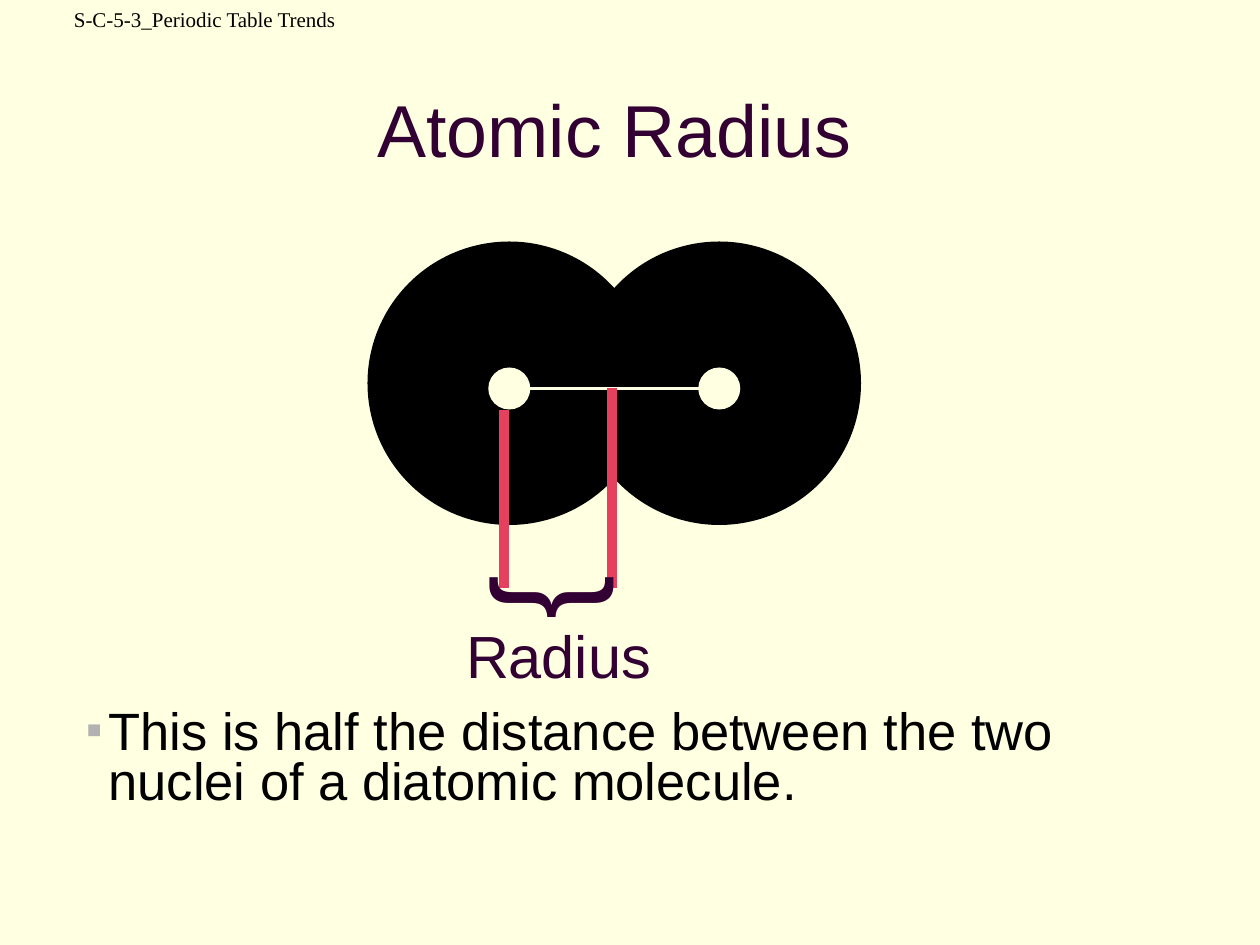
from lxml.etree import SubElement
from pptx import Presentation
from pptx.dml.color import RGBColor
from pptx.enum.shapes import MSO_CONNECTOR, MSO_SHAPE
from pptx.enum.text import MSO_ANCHOR, PP_ALIGN
from pptx.oxml.ns import qn
from pptx.util import Inches, Pt

CREAM = RGBColor(0xFF, 0xFF, 0xE1)
PLUM = RGBColor(0x33, 0x00, 0x33)
BLACK = RGBColor(0x00, 0x00, 0x00)
ROSE = RGBColor(0xE5, 0x40, 0x5D)
BULLET_GREY = "B2B2B2"

COLS, ROWS = 120, 90  # slide grid, twelve cells to the inch


def cells(n):
    return Inches(n / 12)


def add_text(slide, box, text, size, color, font="Arial", align=PP_ALIGN.LEFT):
    s = slide.shapes.add_textbox(*map(cells, box))
    tf = s.text_frame
    tf.word_wrap = True
    tf.text = text
    p = tf.paragraphs[0]
    p.alignment = align
    f = p.runs[0].font
    f.name, f.size = font, Pt(size)
    f.color.rgb = color
    return s


def set_space_before(p, percent):
    """Set the space before a paragraph as a share of its line height."""
    spacing = SubElement(p._p.get_or_add_pPr(), qn("a:spcBef"))
    SubElement(spacing, qn("a:spcPct"), val=str(percent * 1000))


def add_circle(slide, left, top, size, color):
    s = slide.shapes.add_shape(MSO_SHAPE.OVAL, *map(cells, (left, top, size, size)))
    s.shadow.inherit = False
    s.fill.solid()
    s.fill.fore_color.rgb = color
    s.line.fill.background()


def add_line(slide, start, end, color, width):
    s = slide.shapes.add_connector(MSO_CONNECTOR.STRAIGHT, *map(cells, start + end))
    s.line.color.rgb = color
    s.line.width = Pt(width)
    SubElement(s._element.spPr, qn("a:effectLst"))


def add_header(slide, box):
    add_text(slide, box, "S-C-5-3_Periodic Table Trends", 12, BLACK,
             "Times New Roman", PP_ALIGN.CENTER)


def add_title(slide, box):
    s = add_text(slide, box, "Atomic Radius", 42, PLUM, align=PP_ALIGN.CENTER)
    s.text_frame.vertical_anchor = MSO_ANCHOR.BOTTOM


def add_molecule(slide, box):
    """Draw two overlapping atoms, their bond and the marked radius."""
    x, y, width, atom = box
    nucleus = 4
    inset = (atom - nucleus) / 2
    for left in (x, x + width - atom):
        add_circle(slide, left, y, atom, BLACK)
        add_circle(slide, left + inset, y + 12, nucleus, CREAM)

    bond_y = y + 14
    add_line(slide, (x + 15, bond_y), (x + 32, bond_y), CREAM, 2)
    for dx, top in ((23.3, bond_y), (13, bond_y + nucleus / 2)):
        add_line(slide, (x + dx, top), (x + dx, y + 33), ROSE, 6)

    brace = add_text(slide, (x + 14.3, y + 27.4, 10, 16.4), "}", 76, PLUM)
    brace.rotation = 90
    label = add_text(slide, (x + 8.2, y + 35.4, 21.7, 8), "Radius", 34, PLUM)
    for s in (brace, label):
        set_space_before(s.text_frame.paragraphs[0], 50)


def add_definition(slide, box):
    s = add_text(slide, box, "This is half the distance between the two "
                 "nuclei of a diatomic molecule.", 30, BLACK)
    p = s.text_frame.paragraphs[0]
    p.line_spacing = 0.8
    set_space_before(p, 20)
    pPr = p._p.get_or_add_pPr()
    pPr.set("marL", str(Inches(0.18)))
    pPr.set("indent", str(-Inches(0.18)))
    color = SubElement(pPr, qn("a:buClr"))
    SubElement(color, qn("a:srgbClr"), val=BULLET_GREY)
    SubElement(pPr, qn("a:buSzPct"), val="90000")
    SubElement(pPr, qn("a:buFont"), typeface="Arial")
    SubElement(pPr, qn("a:buChar"), char="▪")


def main():
    prs = Presentation()
    prs.slide_width, prs.slide_height = cells(COLS), cells(ROWS)
    slide = prs.slides.add_slide(prs.slide_layouts[6])
    slide.background.fill.solid()
    slide.background.fill.fore_color.rgb = CREAM

    add_title(slide, (18, 7, 81, 10))
    add_definition(slide, (7, 67, 106.3, 15))
    add_molecule(slide, (35, 23, 47, 27))
    add_header(slide, (0, 0, 39, 6))
    prs.save("out.pptx")


if __name__ == "__main__":
    main()
